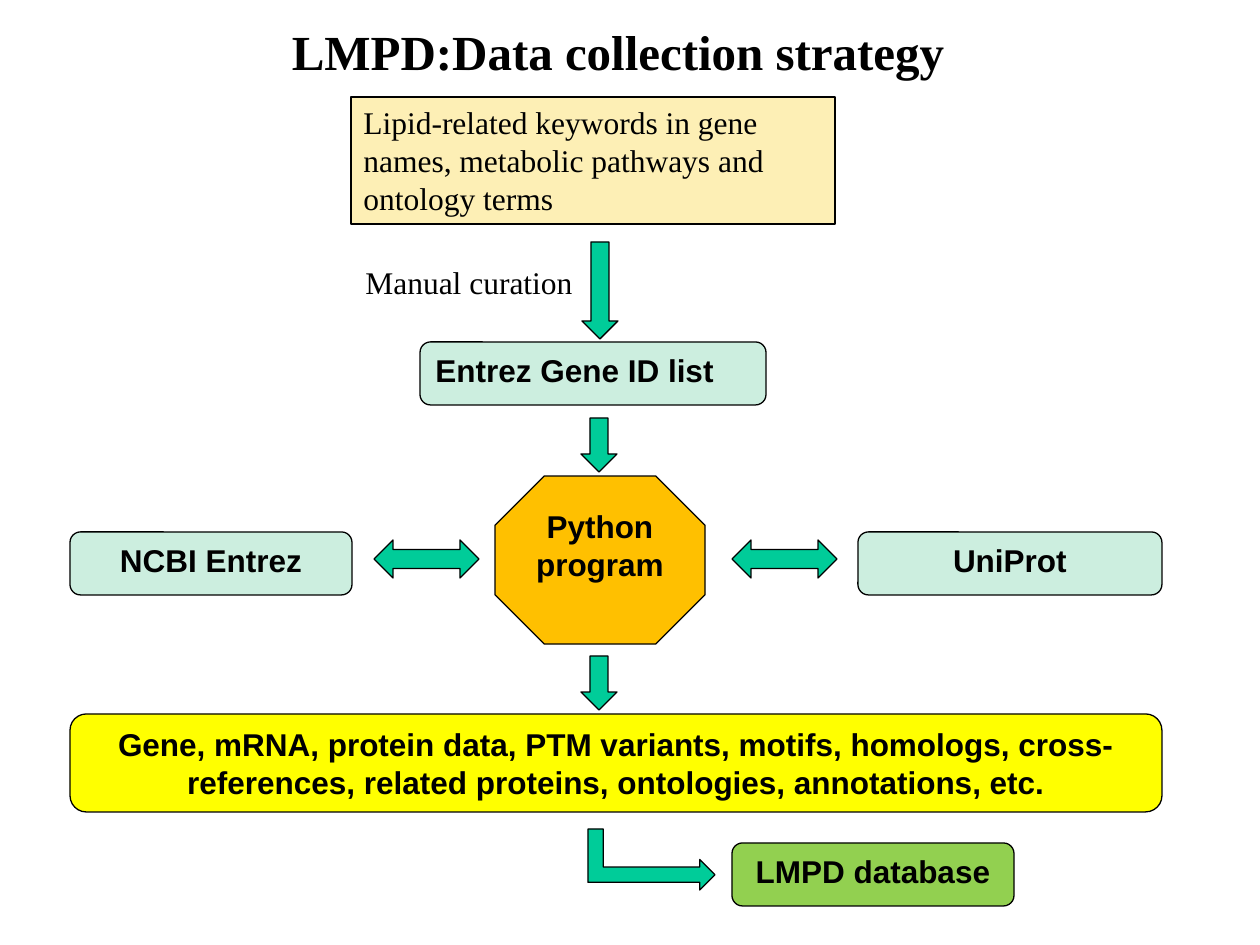
from pptx import Presentation
from pptx.dml.color import RGBColor
from pptx.enum.shapes import MSO_SHAPE
from pptx.enum.text import MSO_ANCHOR, PP_ALIGN
from pptx.util import Emu, Pt

ROUND, RECT, OCTAGON = MSO_SHAPE.ROUNDED_RECTANGLE, MSO_SHAPE.RECTANGLE, MSO_SHAPE.OCTAGON
DOWN, BOTH, BENT = MSO_SHAPE.DOWN_ARROW, MSO_SHAPE.LEFT_RIGHT_ARROW, MSO_SHAPE.BENT_UP_ARROW
LEFT, CENTER = PP_ALIGN.LEFT, PP_ALIGN.CENTER
TOP, MIDDLE = MSO_ANCHOR.TOP, MSO_ANCHOR.MIDDLE

SANS, SERIF = "Arial", "Times New Roman"
COLORS = {
    "ink": "000000", "mint": "CCEEDF", "cream": "FDEFB5", "orange": "FFC000",
    "yellow": "FFFF00", "green": "92D050", "arrow": "00CC99",
}
PX = 914400 / 126

# Content: text, (left, top, width, height) in px, format
LABELS = [
    ("LMPD:Data collection strategy", (39, 6, 1158, 90),
     dict(size=28, bold=True, align=CENTER, anchor=MIDDLE)),
    ("Manual curation", (353, 257, 234, 50), dict(wrap=False)),
]
# Content: shape, fill, text, place, format
SANS_BOLD = dict(font=SANS, bold=True)
CENTERED = dict(SANS_BOLD, align=CENTER)
STEPS = [
    (RECT, "cream", "Lipid-related keywords in gene names, metabolic pathways and ontology terms",
     (351, 97, 484, 127), {}),
    (ROUND, "mint", "Entrez Gene ID list", (420, 342, 346, 63), SANS_BOLD),
    (ROUND, "mint", "NCBI Entrez", (70, 532, 282, 63), CENTERED),
    (ROUND, "mint", "UniProt", (858, 532, 304, 63), CENTERED),
    (OCTAGON, "orange", "Python\nprogram", (495, 476, 210, 168), CENTERED),
    (ROUND, "yellow", "Gene, mRNA, protein data, PTM variants, motifs, homologs, "
     "cross-references, related proteins, ontologies, annotations, etc.",
     (70, 714, 1092, 98), CENTERED),
    (ROUND, "green", "LMPD database", (732, 843, 282, 63), CENTERED),
]
# Arrow shape, place, rotation
ARROWS = [
    (DOWN, (582, 242, 36, 97), 0),
    (DOWN, (581, 418, 36, 54), 0),
    (DOWN, (581, 656, 36, 54), 0),
    (BOTH, (374, 540, 105, 38), 0),
    (BOTH, (732, 540, 105, 38), 0),
    (BENT, (621, 796, 61, 127), 90),
]


def emu(place):
    return [Emu(round(value * PX)) for value in place]


def write(shape, text, font=SERIF, size=18, bold=False, align=LEFT, anchor=TOP, wrap=True):
    frame = shape.text_frame
    frame.word_wrap = wrap
    frame.vertical_anchor = anchor
    for index, line in enumerate(text.split("\n")):
        para = frame.add_paragraph() if index else frame.paragraphs[0]
        para.alignment = align
        span = para.add_run()
        span.text = line
        span.font.name = font
        span.font.size = Pt(size)
        span.font.bold = bold
        span.font.color.rgb = RGBColor.from_string(COLORS["ink"])


def add_outlined(page, kind, fill, place):
    shape = page.shapes.add_shape(kind, *emu(place))
    shape.shadow.inherit = False
    shape.fill.solid()
    shape.fill.fore_color.rgb = RGBColor.from_string(COLORS[fill])
    shape.line.color.rgb = RGBColor.from_string(COLORS["ink"])
    shape.line.width = Pt(0.75)
    return shape


def main():
    deck = Presentation()
    deck.slide_width, deck.slide_height = emu((1260, 945))
    page = deck.slides.add_slide(deck.slide_layouts[6])

    # Title and side label
    for text, place, style in LABELS:
        write(page.shapes.add_textbox(*emu(place)), text, **style)

    # Flow steps
    for kind, fill, text, place, style in STEPS:
        write(add_outlined(page, kind, fill, place), text, **style)

    # Arrows between the steps
    for kind, place, rotation in ARROWS:
        add_outlined(page, kind, "arrow", place).rotation = rotation

    deck.save("out.pptx")


if __name__ == "__main__":
    main()
